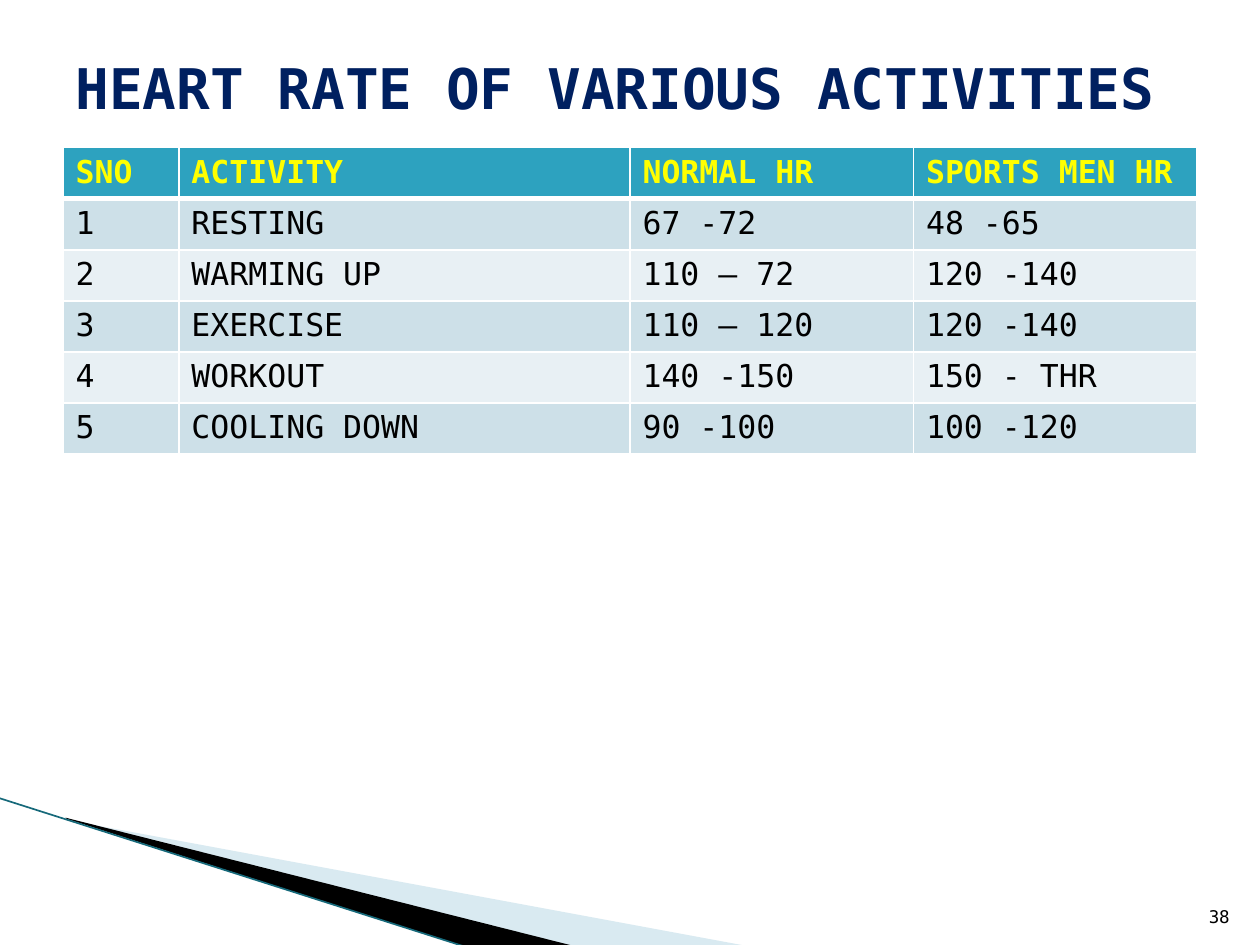
from lxml import etree
from pptx import Presentation
from pptx.dml.color import RGBColor
from pptx.enum import shapes, text
from pptx.oxml import ns
from pptx.util import Pt

FONT = "DejaVu Sans Mono"
COLORS = {
    "title": "002060", "header": "2DA2BF", "header_text": "FFFF00",
    "odd_row": "CDE0E8", "even_row": "E8F0F4", "body_text": "000000",
    "border": "FFFFFF", "pale_wedge": "A0CBDC", "dark_wedge": "000000",
    "edge": "16697A",
}
HEART_RATES = [
    ("SNO", "ACTIVITY", "NORMAL HR", "SPORTS MEN HR"),
    ("1", "RESTING", "67 -72", "48 -65"),
    ("2", "WARMING UP", "110 – 72", "120 -140"),
    ("3", "EXERCISE", "110 – 120", "120 -140"),
    ("4", "WORKOUT", "140 -150", "150 - THR"),
    ("5", "COOLING DOWN", "90 -100", "100 -120"),
]
COLUMN_SHARES = (0.92, 3.58, 2.25, 2.25)
WEDGES = {
    "pale_wedge": [(39.6, 12.7), (428.4, 84.7), (328.3, 84.7), (39.6, 12)],
    "dark_wedge": [(38.2, 11.3), (329, 84.7), (267.8, 85.4), (38.9, 12)],
}


def rgb(name):
    return RGBColor.from_string(COLORS[name])


def write(frame, words, size, color, bold=False, align=text.PP_ALIGN.LEFT):
    paragraph = frame.paragraphs[0]
    paragraph.alignment = align
    run = paragraph.add_run()
    run.text = words
    for key, value in {"name": FONT, "size": Pt(size), "bold": bold}.items():
        setattr(run.font, key, value)
    run.font.color.rgb = rgb(color)


def add_label(slide, box, words, anchor, **style):
    frame = slide.shapes.add_textbox(*map(Pt, box)).text_frame
    frame.word_wrap = True
    frame.vertical_anchor = anchor
    write(frame, words, **style)


def add_swoosh(slide, box):
    left, top, width, height = box
    for name, corners in WEDGES.items():
        points = [(Pt(left + x), Pt(top + y)) for x, y in corners]
        builder = slide.shapes.build_freeform(*points[0], scale=1.0)
        builder.add_line_segments(points[1:], close=True)
        wedge = builder.convert_to_shape()
        wedge.shadow.inherit = False
        wedge.fill.solid()
        wedge.fill.fore_color.rgb = rgb(name)
        wedge.line.fill.background()
        if name == "pale_wedge":
            tint = wedge.fill._xPr.find(".//" + ns.qn("a:srgbClr"))
            etree.SubElement(tint, ns.qn("a:alpha"), val="40000")
    edge = slide.shapes.add_connector(
        shapes.MSO_CONNECTOR.STRAIGHT,
        Pt(left), Pt(top), Pt(left + width), Pt(top + height))
    edge.line.color.rgb = rgb("edge")
    edge.line.width = Pt(0.95)
    etree.SubElement(edge._element.spPr, ns.qn("a:effectLst"))


def add_borders(cell, bottom):
    properties = cell._tc.get_or_add_tcPr()
    widths = {"lnL": 1, "lnR": 1, "lnT": 1, "lnB": bottom}
    for index, (side, width) in enumerate(widths.items()):
        border = etree.Element(ns.qn("a:" + side), w=str(Pt(width)))
        fill = etree.SubElement(border, ns.qn("a:solidFill"))
        etree.SubElement(fill, ns.qn("a:srgbClr"), val=COLORS["border"])
        properties.insert(index, border)


def add_heart_rate_table(slide, box):
    row_count, column_count = len(HEART_RATES), len(COLUMN_SHARES)
    table = slide.shapes.add_table(row_count, column_count, *map(Pt, box)).table
    for column, share in zip(table.columns, COLUMN_SHARES):
        column.width = Pt(round(box[2] * share / sum(COLUMN_SHARES), 2))
    for r, record in enumerate(HEART_RATES):
        table.rows[r].height = Pt(round(box[3] / row_count, 2))
        is_header = r == 0
        row_fill = "header" if is_header else ("even_row", "odd_row")[r % 2]
        for c, words in enumerate(record):
            cell = table.cell(r, c)
            cell.fill.solid()
            cell.fill.fore_color.rgb = rgb(row_fill)
            add_borders(cell, 3 if is_header else 1)
            write(cell.text_frame, words, 18,
                  "header_text" if is_header else "body_text", is_header)


def main():
    deck = Presentation()
    deck.slide_width, deck.slide_height = Pt(720), Pt(540)
    slide = deck.slides.add_slide(deck.slide_layouts[6])
    add_swoosh(slide, (-0.7, 456, 267.8, 85.4))
    add_heart_rate_table(slide, (36, 84.4, 648, 175))
    add_label(slide, (681, 504.7, 28.8, 28.8), "38", text.MSO_ANCHOR.BOTTOM,
              size=10, color="body_text", align=text.PP_ALIGN.RIGHT)
    add_label(slide, (36, 21.6, 648, 56.2), "HEART RATE OF VARIOUS ACTIVITIES",
              text.MSO_ANCHOR.MIDDLE, size=32, color="title", bold=True)
    deck.save("out.pptx")


if __name__ == "__main__":
    main()
